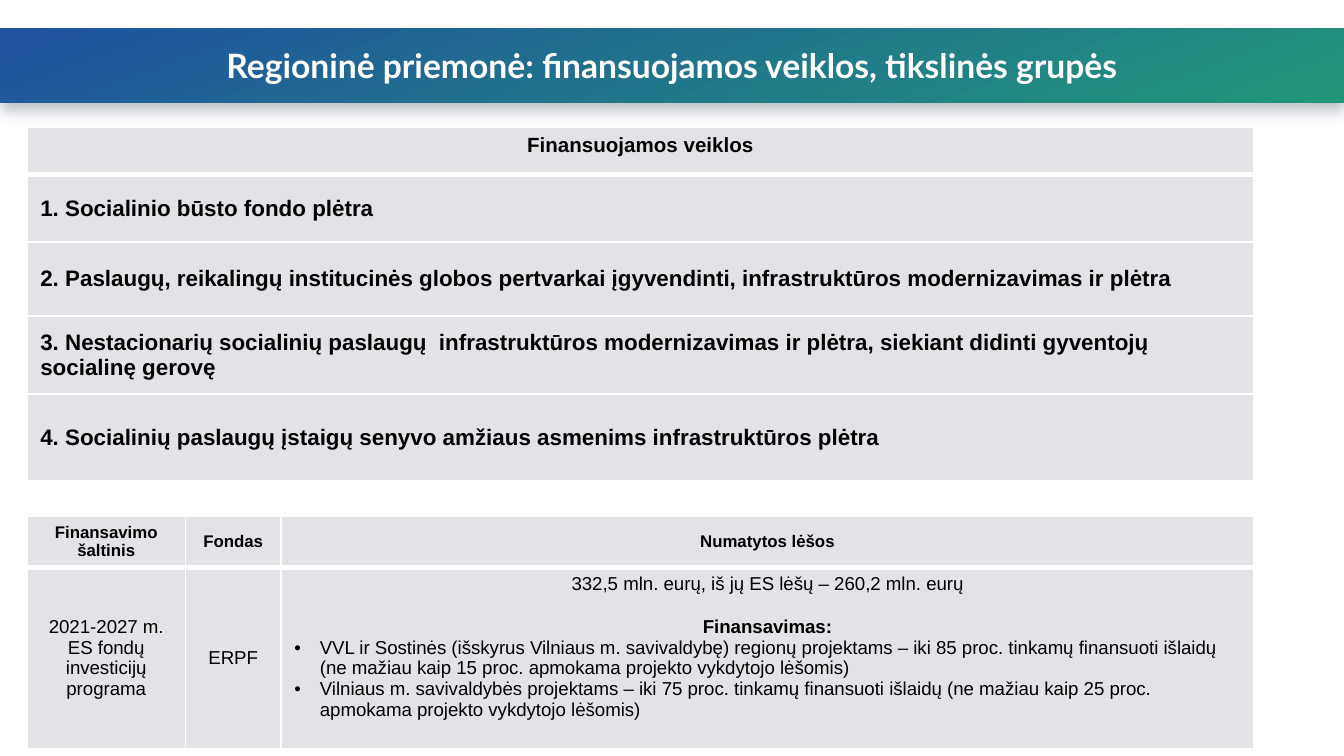
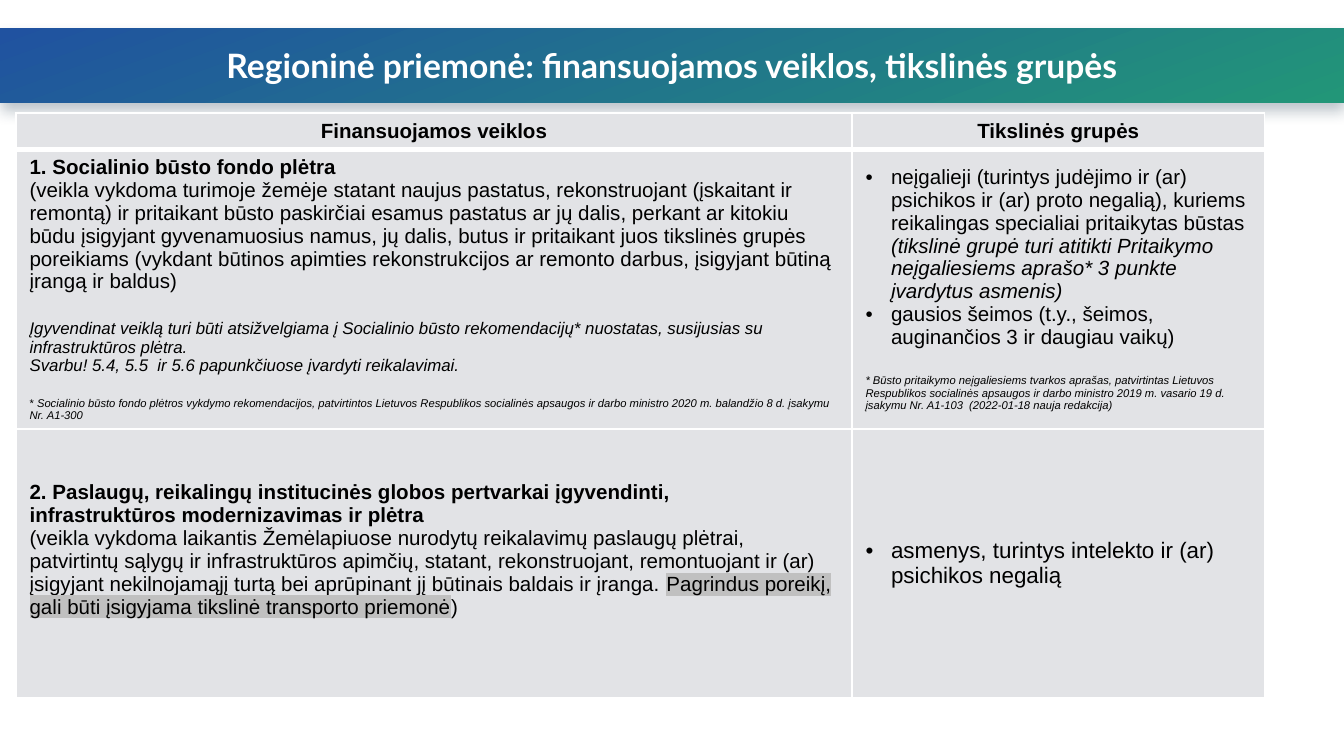
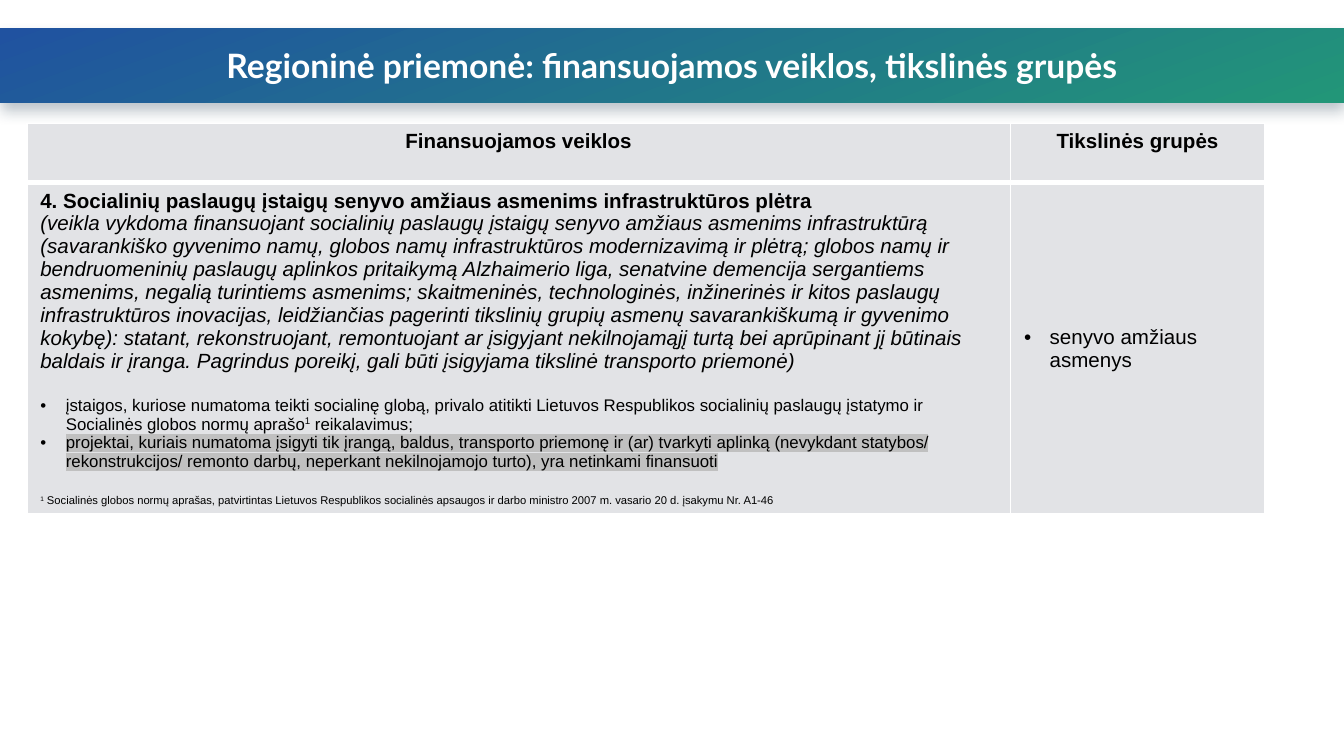
from dataclasses import dataclass

from lxml.etree import SubElement
from pptx import Presentation
from pptx.dml.color import RGBColor
from pptx.enum.text import MSO_ANCHOR, PP_ALIGN
from pptx.oxml import parse_xml
from pptx.oxml.ns import nsdecls, qn
from pptx.util import Inches, Pt

COLORS = {
    "band_start": "2052A0",
    "band_end": "229678",
    "band_shadow": "1F3B50",
    "band_text": "FFFFFF",
    "cell": "E2E3E6",
    "border": "FFFFFF",
    "text": "000000",
    "highlight": "C0C0C0",
}
TITLE = "Regioninė priemonė: finansuojamos veiklos, tikslinės grupės"
TITLE_FONT = "Lato"
BODY_FONT = "Arial"
LINE_HEIGHT = 1.15
BULLET_INDENT = 0.19
HARD_SPACE = chr(160)

ACTIVITIES = "Finansuojamos veiklos"
TARGET_GROUPS = "Tikslinės grupės"
HOUSING = "1. Socialinio būsto fondo plėtra"
CARE_REFORM = (
    "2. Paslaugų, reikalingų institucinės globos pertvarkai įgyvendinti, "
    f"infrastruktūros{HARD_SPACE}modernizavimas ir plėtra"
)
OUTPATIENT = (
    f"3. Nestacionarių socialinių paslaugų {HARD_SPACE}infrastruktūros modernizavimas ir plėtra, "
    "siekiant didinti gyventojų socialinę gerovę"
)
ELDERLY = "4. Socialinių paslaugų įstaigų senyvo amžiaus asmenims infrastruktūros plėtra"


@dataclass
class Run:
    text: str
    bold: bool = False
    italic: bool = False
    highlighted: bool = False
    raised: bool = False


@dataclass
class Para:
    runs: list
    size: float = 11
    centered: bool = False
    bulleted: bool = False
    gap: float = 0


def plain(text, size=11, **options):
    return Para([Run(text)], size, **options)


def bold(text, size=11, **options):
    return Para([Run(text, bold=True)], size, **options)


def italic(text, size=11, **options):
    return Para([Run(text, italic=True)], size, **options)


def bullet(text, size=11):
    return plain(text, size, bulleted=True)


def header(text, size=11):
    return [bold(text, size, centered=True)]


def rgb(name):
    return RGBColor.from_string(COLORS[name])


def add_title_band(slide):
    band = slide.shapes.title
    band.left, band.top = Inches(0), Inches(0.21)
    band.width, band.height = Inches(10), Inches(0.55)
    band.fill.gradient()
    band.fill.gradient_angle = 290
    for stop, name in zip(band.fill.gradient_stops, ("band_start", "band_end")):
        stop.color.rgb = rgb(name)
    band._element.spPr.append(parse_xml(
        f'<a:effectLst {nsdecls("a")}>'
        f'<a:outerShdw blurRad="{Pt(8)}" dist="{Pt(4)}" dir="5400000" rotWithShape="0">'
        f'<a:srgbClr val="{COLORS["band_shadow"]}"><a:alpha val="30000"/></a:srgbClr>'
        "</a:outerShdw></a:effectLst>"
    ))
    frame = band.text_frame
    frame.word_wrap = True
    frame.vertical_anchor = MSO_ANCHOR.MIDDLE
    paragraph = frame.paragraphs[0]
    paragraph.alignment = PP_ALIGN.CENTER
    run = paragraph.add_run()
    run.text = TITLE
    run.font.name = TITLE_FONT
    run.font.size = Pt(18)
    run.font.bold = True
    run.font.color.rgb = rgb("band_text")


def add_run(paragraph, content, size):
    run = paragraph.add_run()
    run.text = content.text
    font = run.font
    font.name = BODY_FONT
    font.size = Pt(size)
    font.bold = content.bold
    font.italic = content.italic
    font.color.rgb = rgb("text")
    properties = run._r.get_or_add_rPr()
    if content.raised:
        properties.set("baseline", "30000")
    if content.highlighted:
        properties.find(qn("a:solidFill")).addnext(parse_xml(
            f'<a:highlight {nsdecls("a")}><a:srgbClr val="{COLORS["highlight"]}"/></a:highlight>'
        ))


def fill_paragraph(paragraph, content):
    if content.bulleted:
        properties = paragraph._p.get_or_add_pPr()
        properties.set("marL", str(Inches(BULLET_INDENT)))
        properties.set("indent", str(-Inches(BULLET_INDENT)))
        SubElement(properties, qn("a:buFont"), typeface=BODY_FONT)
        SubElement(properties, qn("a:buChar"), char="•")
    if content.centered:
        paragraph.alignment = PP_ALIGN.CENTER
    if content.gap:
        paragraph.space_before = Pt(round(content.gap * LINE_HEIGHT, 1))
    for run in content.runs:
        add_run(paragraph, run, content.size)


def set_borders(cell, bottom):
    properties = cell._tc.get_or_add_tcPr()
    for side, width in (("L", 1), ("R", 1), ("T", 1), ("B", bottom)):
        line = SubElement(properties, qn(f"a:ln{side}"), w=str(Pt(width)))
        fill = SubElement(line, qn("a:solidFill"))
        SubElement(fill, qn("a:srgbClr"), val=COLORS["border"])


def add_grid(slide, left, top, widths, heights, rows, header_anchor=MSO_ANCHOR.TOP):
    frame = slide.shapes.add_table(
        len(heights), len(widths), Inches(left), Inches(top),
        Inches(sum(widths)), Inches(sum(heights)),
    )
    table = frame.table
    table.first_row = table.horz_banding = False
    for column, width in zip(table.columns, widths):
        column.width = Inches(width)
    for index, (height, contents) in enumerate(zip(heights, rows)):
        table.rows[index].height = Inches(height)
        for cell, paragraphs in zip(table.rows[index].cells, contents):
            set_borders(cell, 1 if index else 3)
            cell.fill.solid()
            cell.fill.fore_color.rgb = rgb("cell")
            cell.vertical_anchor = MSO_ANCHOR.MIDDLE if index else header_anchor
            text = cell.text_frame
            for position, content in enumerate(paragraphs):
                paragraph = text.add_paragraph() if position else text.paragraphs[0]
                fill_paragraph(paragraph, content)
    return table


def add_overview(slide):
    activities = [HOUSING, CARE_REFORM, OUTPATIENT, ELDERLY]
    add_grid(
        slide, 0.2, 0.95, [9.13], [0.35, 0.5, 0.55, 0.58, 0.65],
        [[header(ACTIVITIES)]] + [[[bold(activity, 12)]] for activity in activities],
    )
    source = [plain("2021-2027 m. ES fondų investicijų programa", 10, centered=True)]
    fund = [plain("ERPF", 10, centered=True)]
    amounts = [
        plain("332,5 mln. eurų, iš jų ES lėšų – 260,2 mln. eurų", 10, centered=True),
        bold("Finansavimas:", 10, centered=True, gap=10),
        bullet(
            "VVL ir Sostinės (išskyrus Vilniaus m. savivaldybę) regionų projektams – iki 85 proc. "
            "tinkamų finansuoti išlaidų (ne mažiau kaip 15 proc. apmokama projekto vykdytojo lėšomis)",
            10,
        ),
        bullet(
            "Vilniaus m. savivaldybės projektams – iki 75 proc. tinkamų finansuoti išlaidų "
            "(ne mažiau kaip 25 proc. apmokama projekto vykdytojo lėšomis)",
            10,
        ),
    ]
    titles = ["Finansavimo šaltinis", "Fondas", "Numatytos lėšos"]
    funding = add_grid(
        slide, 0.2, 3.84, [1.18, 0.71, 7.24], [0.37, 1.35],
        [[header(title, 9) for title in titles], [source, fund, amounts]],
        MSO_ANCHOR.MIDDLE,
    )
    funding.cell(1, 2).margin_bottom = Inches(0.21)


def add_housing_and_care(slide):
    housing = [
        bold(HOUSING),
        plain(
            "(veikla vykdoma turimoje žemėje statant naujus pastatus, rekonstruojant (įskaitant ir "
            "remontą) ir pritaikant būsto paskirčiai esamus pastatus ar jų dalis, perkant ar kitokiu "
            "būdu įsigyjant gyvenamuosius namus, jų dalis, butus ir pritaikant juos tikslinės grupės "
            "poreikiams (vykdant būtinos apimties rekonstrukcijos ar remonto darbus, įsigyjant būtiną "
            "įrangą ir baldus)"
        ),
        italic(
            "Įgyvendinat veiklą turi būti atsižvelgiama į Socialinio būsto rekomendacijų* nuostatas, "
            "susijusias su infrastruktūros plėtra.",
            9, gap=12,
        ),
        italic(f"Svarbu! 5.4, 5.5 {HARD_SPACE}ir 5.6 papunkčiuose įvardyti reikalavimai.", 9),
        Para([
            Run("* "),
            Run(
                "Socialinio būsto fondo plėtros vykdymo rekomendacijos, patvirtintos Lietuvos "
                "Respublikos socialinės apsaugos ir darbo ministro 2020 m. balandžio 8 d. įsakymu "
                "Nr. A1-300",
                italic=True,
            ),
        ], 6, gap=10),
    ]
    housing_groups = [
        Para([
            Run(
                "neįgalieji (turintys judėjimo ir (ar) psichikos ir (ar) proto negalią), kuriems "
                "reikalingas specialiai pritaikytas būstas "
            ),
            Run(
                "(tikslinė grupė turi atitikti Pritaikymo neįgaliesiems aprašo* 3 punkte įvardytus "
                "asmenis)",
                italic=True,
            ),
        ], bulleted=True),
        bullet("gausios šeimos (t.y., šeimos, auginančios 3 ir daugiau vaikų)"),
        italic(
            "* Būsto pritaikymo neįgaliesiems tvarkos aprašas, patvirtintas Lietuvos Respublikos "
            "socialinės apsaugos ir darbo ministro 2019 m. vasario 19 d. įsakymu Nr. A1-103  "
            "(2022-01-18 nauja redakcija)",
            6, gap=12,
        ),
    ]
    care = [
        bold(CARE_REFORM),
        Para([
            Run(
                "(veikla vykdoma laikantis Žemėlapiuose nurodytų reikalavimų paslaugų plėtrai, "
                "patvirtintų sąlygų ir infrastruktūros apimčių, statant, rekonstruojant, "
                "remontuojant ir (ar) įsigyjant nekilnojamąjį turtą bei aprūpinant jį būtinais "
                "baldais ir įranga. "
            ),
            Run(
                "Pagrindus poreikį, gali būti įsigyjama tikslinė transporto priemonė",
                highlighted=True,
            ),
            Run(")"),
        ]),
    ]
    care_groups = [bullet("asmenys, turintys intelekto ir (ar) psichikos negalią", 12)]
    details = add_grid(
        slide, 0.12, 0.84, [6.22, 3.07], [0.26, 2.05, 2],
        [
            [header(ACTIVITIES), header(TARGET_GROUPS)],
            [housing, housing_groups],
            [care, care_groups],
        ],
    )
    details.cell(2, 0).margin_bottom = Inches(0.25)


def add_elderly_care(slide):
    elderly = [
        bold(ELDERLY),
        italic(
            "(veikla vykdoma finansuojant socialinių paslaugų įstaigų senyvo amžiaus asmenims "
            "infrastruktūrą"
        ),
        italic(
            "(savarankiško gyvenimo namų, globos namų infrastruktūros modernizavimą ir plėtrą; "
            "globos namų ir bendruomeninių paslaugų aplinkos pritaikymą Alzhaimerio liga, senatvine "
            "demencija sergantiems asmenims, negalią turintiems asmenims; skaitmeninės, "
            "technologinės, inžinerinės ir kitos paslaugų infrastruktūros inovacijas, leidžiančias "
            "pagerinti tikslinių grupių asmenų savarankiškumą ir gyvenimo kokybę): statant, "
            "rekonstruojant, remontuojant ar įsigyjant nekilnojamąjį turtą bei aprūpinant jį "
            "būtinais baldais ir įranga. Pagrindus poreikį, gali būti įsigyjama tikslinė transporto "
            "priemonė)"
        ),
        Para([
            Run(
                "įstaigos, kuriose numatoma teikti socialinę globą, privalo atitikti Lietuvos "
                "Respublikos socialinių paslaugų įstatymo ir Socialinės globos normų aprašo"
            ),
            Run("1", raised=True),
            Run(" reikalavimus;"),
        ], 9, bulleted=True, gap=11),
        Para([
            Run(
                "projektai, kuriais numatoma įsigyti tik įrangą, baldus, transporto priemonę ir (ar) "
                "tvarkyti aplinką (nevykdant statybos/ rekonstrukcijos/ remonto darbų, neperkant "
                "nekilnojamojo turto), yra netinkami finansuoti",
                highlighted=True,
            ),
        ], 9, bulleted=True),
        Para([
            Run("1", raised=True),
            Run(
                " Socialinės globos normų aprašas, patvirtintas Lietuvos Respublikos socialinės "
                "apsaugos ir darbo ministro 2007 m. vasario 20 d. įsakymu Nr. A1-46"
            ),
        ], 6, gap=11),
    ]
    add_grid(
        slide, 0.2, 0.92, [7.32, 1.89], [0.44, 2.44],
        [
            [header(ACTIVITIES), header(TARGET_GROUPS)],
            [elderly, [bullet("senyvo amžiaus asmenys")]],
        ],
    )


def main():
    presentation = Presentation()
    presentation.slide_width = Inches(10)
    presentation.slide_height = presentation.slide_width * 9 // 16
    title_only = presentation.slide_layouts[5]
    for add_content in (add_overview, add_housing_and_care, add_elderly_care):
        slide = presentation.slides.add_slide(title_only)
        add_title_band(slide)
        add_content(slide)
    presentation.save("out.pptx")


if __name__ == "__main__":
    main()
